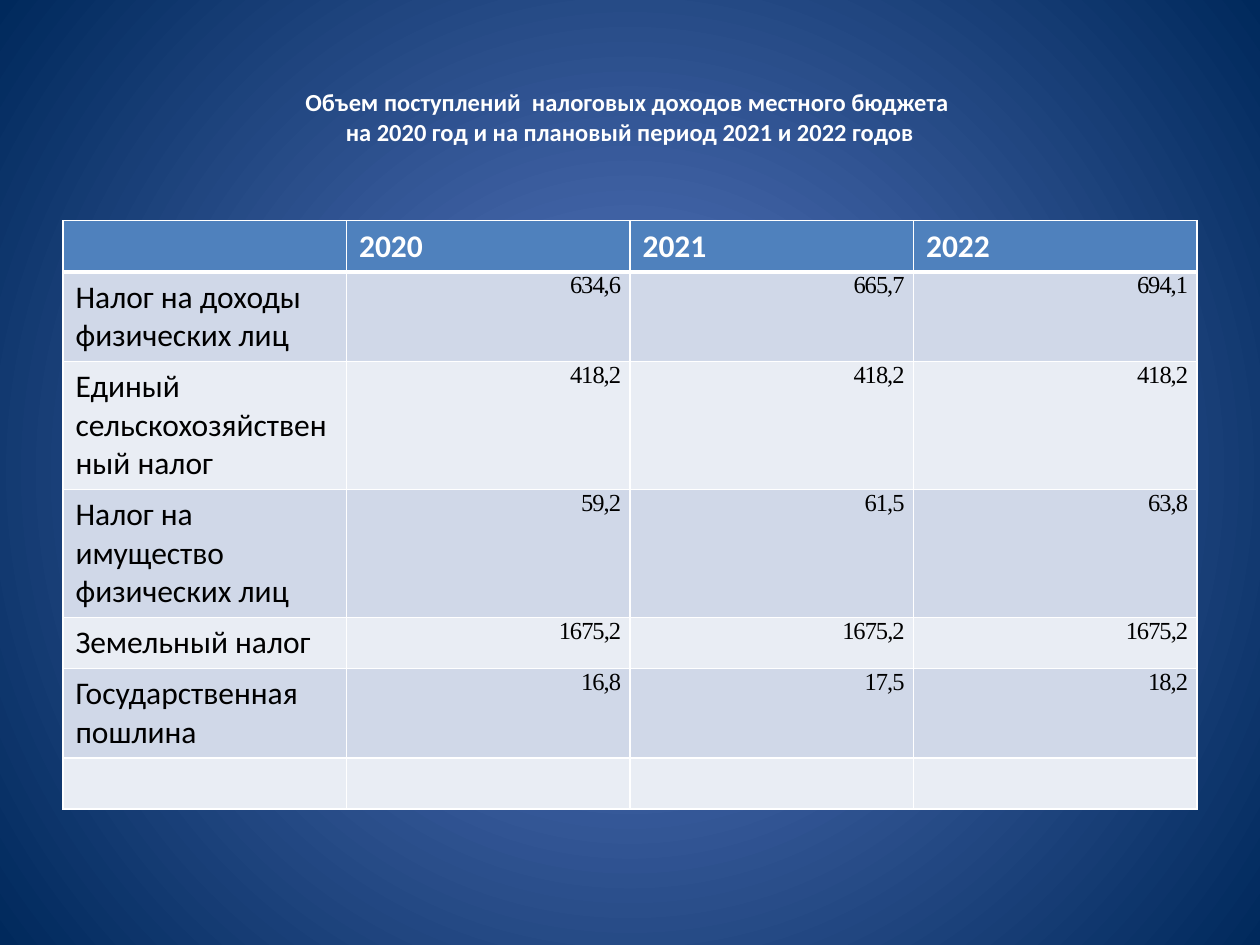
"""Build a slide with a table of local tax revenue for 2020 to 2022."""
from lxml import etree
from pptx import Presentation
from pptx import util as u
from pptx.dml.color import RGBColor
from pptx.enum import text
from pptx.oxml import ns

WHITE = RGBColor(0xFF, 0xFF, 0xFF)
BLACK = RGBColor(0, 0, 0)
GLOW = RGBColor(0x5E, 0x7C, 0xC5)
NAVY = RGBColor(0x00, 0x29, 0x5C)
HEAD = RGBColor(0x4F, 0x81, 0xBD)
BANDS = (RGBColor(0xE9, 0xED, 0xF4), RGBColor(0xD0, 0xD8, 0xE8))

TITLE = (
    "Объем поступлений  налоговых доходов местного бюджета ",
    "на 2020 год и на плановый период 2021 и 2022 годов",
)
TAXES = (
    ("", "2020", "2021", "2022"),
    ("Налог на доходы физических лиц", "634,6", "665,7", "694,1"),
    ("Единый сельскохозяйственный налог", "418,2", "418,2", "418,2"),
    ("Налог на имущество физических лиц", "59,2", "61,5", "63,8"),
    ("Земельный налог", "1675,2", "1675,2", "1675,2"),
    ("Государственная пошлина", "16,8", "17,5", "18,2"),
    ("", "", "", ""),
)


class Deck:
    """Hold the style and the current slide."""

    sans = "Calibri"
    serif = "Times New Roman"
    large = u.Pt(18)
    small = u.Pt(14)

    def __init__(self):
        self.prs = Presentation()
        self.prs.slide_width, self.prs.slide_height = u.Cm(25.4), u.Cm(19.05)
        self.slide = self.prs.slides.add_slide(self.prs.slide_layouts[5])

    def glow(self, inner, outer):
        """Fill the background with a round gradient."""
        fill = self.slide.background.fill
        fill.gradient()
        for stop, color, place in zip(fill.gradient_stops, (inner, outer), (0, 1)):
            stop.color.rgb, stop.position = color, place
        grad = self.slide.element.find(".//" + ns.qn("a:gradFill"))
        grad.remove(grad.find(ns.qn("a:lin")))
        ring = etree.SubElement(grad, ns.qn("a:path"), path="circle")
        sides = dict.fromkeys("ltrb", "50000")
        etree.SubElement(ring, ns.qn("a:fillToRect"), sides)

    def put(self, para, words, size, color, bold=False, face=sans):
        """Add one styled run."""
        run = para.add_run()
        run.text = words
        font = run.font
        font.name, font.size, font.bold = face, size, bold
        font.color.rgb = color
        return run

    def title(self, lines):
        """Place and fill the title."""
        box = self.slide.shapes.title
        box.left, box.top = u.Cm(1.27), u.Cm(0.76)
        box.width, box.height = u.Cm(22.86), u.Cm(3.18)
        box.text_frame.vertical_anchor = text.MSO_ANCHOR.MIDDLE
        para = box.text_frame.paragraphs[0]
        para.alignment = text.PP_ALIGN.CENTER
        for i, line in enumerate(lines):
            if i:
                para.add_line_break()
            self.put(para, line, self.small, WHITE, True)

    def edge(self, cell, side, width):
        """Draw one white cell border."""
        props = cell._tc.get_or_add_tcPr()
        line = etree.SubElement(props, ns.qn("a:ln" + side), w=str(u.Pt(width)))
        fill = etree.SubElement(line, ns.qn("a:solidFill"))
        etree.SubElement(fill, ns.qn("a:srgbClr"), val=str(WHITE))

    def cell(self, cell, words, row, col):
        """Style and fill one table cell."""
        for side in "LRTB":
            thick = (row, side) in ((0, "B"), (1, "T"))
            self.edge(cell, side, 3 if thick else 1)
        cell.fill.solid()
        cell.fill.fore_color.rgb = BANDS[row % 2] if row else HEAD
        if not words:
            return
        para = cell.text_frame.paragraphs[0]
        if row and col:
            cell.margin_left = cell.margin_right = u.Cm(0.18)
            cell.margin_top = cell.margin_bottom = 0
            para.alignment = text.PP_ALIGN.RIGHT
            run = self.put(para, words, self.small, BLACK, face=self.serif)
            run.font._element.set("spc", "-60")
        else:
            self.put(para, words, self.large, BLACK if row else WHITE, not row)

    def table(self, rows):
        """Add the table with even rows and columns."""
        high = u.Cm(1.03)
        frame = self.slide.shapes.add_table(
            len(rows), len(rows[0]), u.Cm(1.27), u.Cm(4.45), u.Cm(22.86), high * len(rows)
        )
        for r, row in enumerate(rows):
            for c, words in enumerate(row):
                self.cell(frame.table.cell(r, c), words, r, c)


def main():
    deck = Deck()
    deck.glow(GLOW, NAVY)
    deck.title(TITLE)
    deck.table(TAXES)
    deck.prs.save("out.pptx")


if __name__ == "__main__":
    main()
